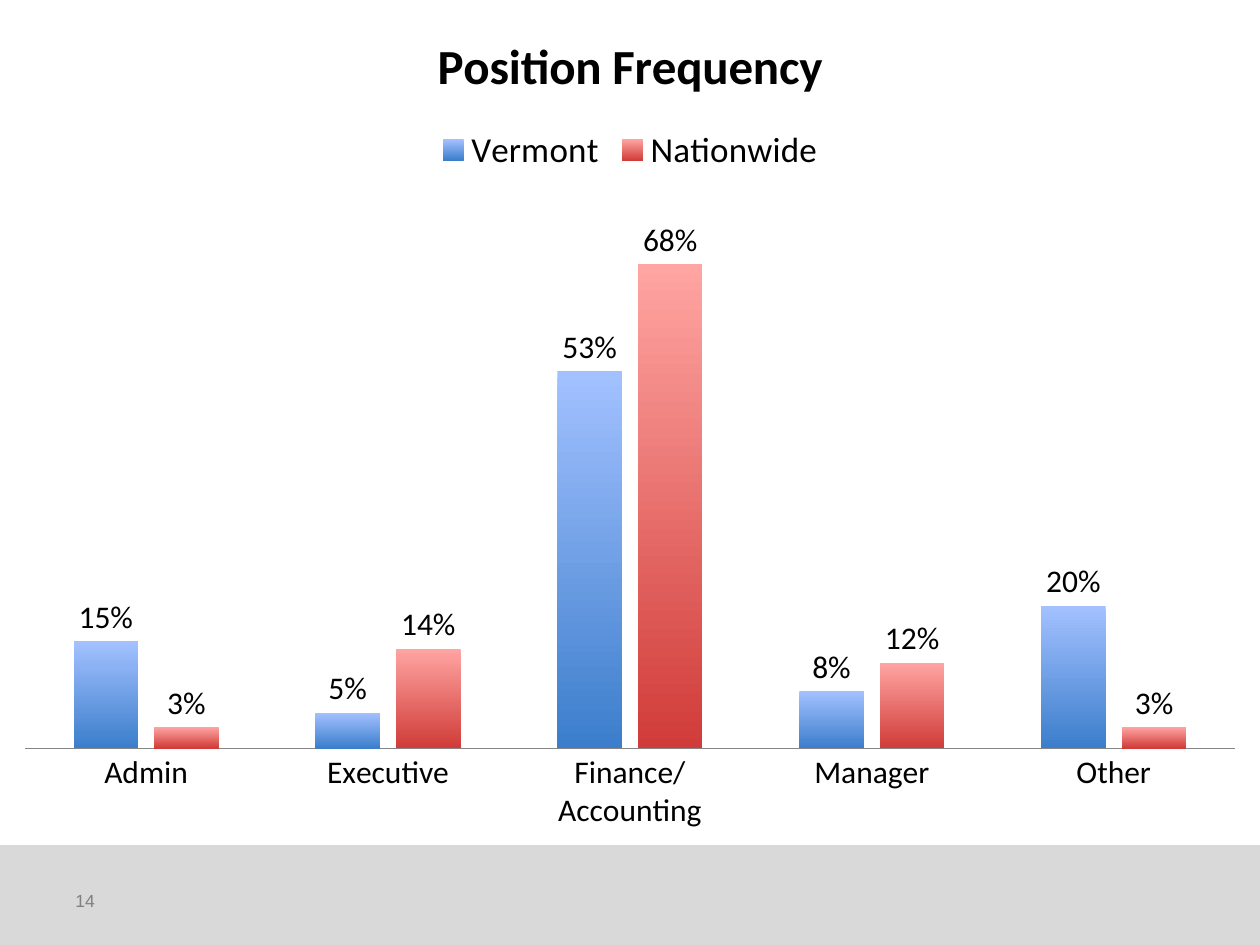
from pptx import Presentation
from pptx.chart.data import CategoryChartData
from pptx.dml.color import RGBColor
from pptx.enum.chart import XL_CHART_TYPE, XL_LABEL_POSITION, XL_LEGEND_POSITION, XL_TICK_MARK
from pptx.enum.shapes import MSO_SHAPE
from pptx.enum.text import MSO_ANCHOR
from pptx.oxml import parse_xml
from pptx.oxml.ns import nsdecls
from pptx.util import Inches, Pt

BLACK = RGBColor(0x00, 0x00, 0x00)
BAND_GRAY = RGBColor(0xD9, 0xD9, 0xD9)
NUMBER_GRAY = RGBColor(0x80, 0x80, 0x80)
AXIS_GRAY = RGBColor(0x86, 0x86, 0x86)
BLUE_TOP, BLUE_BOTTOM = RGBColor(0xA3, 0xC1, 0xFF), RGBColor(0x3C, 0x7E, 0xCC)
RED_TOP, RED_BOTTOM = RGBColor(0xFF, 0xA5, 0xA2), RGBColor(0xD0, 0x3C, 0x39)

prs = Presentation()
prs.slide_width, prs.slide_height = Inches(10), Inches(7.5)
W, H = prs.slide_width, prs.slide_height
slide = prs.slides.add_slide(prs.slide_layouts[6])

# Footer band
band_top = int(H * 0.895)
band = slide.shapes.add_shape(MSO_SHAPE.RECTANGLE, 0, band_top, W, H - band_top)
band.shadow.inherit = False
band.fill.solid()
band.fill.fore_color.rgb = BAND_GRAY
band.line.color.rgb = BAND_GRAY
band.line.width = Pt(0.75)

# Slide number
number_box = slide.shapes.add_textbox(int(W * 0.05), Inches(6.95), Inches(2.33), Inches(0.4))
number_box.text_frame.word_wrap = True
number_box.text_frame.vertical_anchor = MSO_ANCHOR.MIDDLE
number = number_box.text_frame.paragraphs[0].add_run()
number.text = "14"
number.font.name = "Arial"
number.font.size = Pt(10)
number.font.color.rgb = NUMBER_GRAY

# Position shares
shares = CategoryChartData(number_format="0%")
shares.categories = ["Admin", "Executive", "Finance/Accounting", "Manager", "Other"]
shares.add_series("Vermont", (0.15, 0.05, 0.53, 0.08, 0.20))
shares.add_series("Nationwide", (0.03, 0.14, 0.68, 0.12, 0.03))
chart = slide.shapes.add_chart(
    XL_CHART_TYPE.COLUMN_CLUSTERED, 0, 0, W, int(H * 0.9), shares).chart
chart.font.name = "Calibri"
chart.font.size = Pt(10)
chart.font.color.rgb = BLACK

# Title and legend
chart.has_title = True
title = chart.chart_title.text_frame.paragraphs[0].add_run()
title.text = "Position Frequency"
title.font.name = "Calibri"
title.font.size = Pt(28)
title.font.bold = True
title.font.color.rgb = BLACK
chart.chart_title.include_in_layout = False
chart.has_legend = True
chart.legend.position = XL_LEGEND_POSITION.TOP
chart.legend.include_in_layout = False
chart.legend.font.size = Pt(20)

# Axes
positions = chart.category_axis
positions.major_tick_mark = XL_TICK_MARK.NONE
positions.tick_labels.font.size = Pt(18)
positions.format.line.color.rgb = AXIS_GRAY
percent = chart.value_axis
percent.minimum_scale, percent.maximum_scale = 0, 0.8
percent.has_major_gridlines = False
percent.visible = False

# Columns with gradient fills and value labels
plot = chart.plots[0]
plot.gap_width, plot.overlap = 150, -25
plot.vary_by_categories = False
for region, shades in zip(plot.series, ((BLUE_TOP, BLUE_BOTTOM), (RED_TOP, RED_BOTTOM))):
    region.invert_if_negative = False
    fill = region.format.fill
    fill.gradient()
    fill.gradient_angle = 270
    for stop, shade, place in zip(fill.gradient_stops, shades, (0, 1)):
        stop.color.rgb = shade
        stop.position = place
    labels = region.data_labels
    labels.show_value = True
    labels.number_format, labels.number_format_is_linked = "0%", False
    labels.position = XL_LABEL_POSITION.OUTSIDE_END
    labels.font.size = Pt(18)

# Plot area as shares of the chart
plot_area = plot._element.getparent()
for old_layout in plot_area.findall("{*}layout"):
    plot_area.remove(old_layout)
frame = "".join(f'<c:{tag} val="{share}"/>' for tag, share in
                (("x", 0.02), ("y", 0.21), ("w", 0.96), ("h", 0.67)))
plot_area.insert(0, parse_xml(
    f'<c:layout {nsdecls("c")}><c:manualLayout><c:layoutTarget val="inner"/>'
    f'<c:xMode val="edge"/><c:yMode val="edge"/>{frame}</c:manualLayout></c:layout>'))

prs.save("out.pptx")
